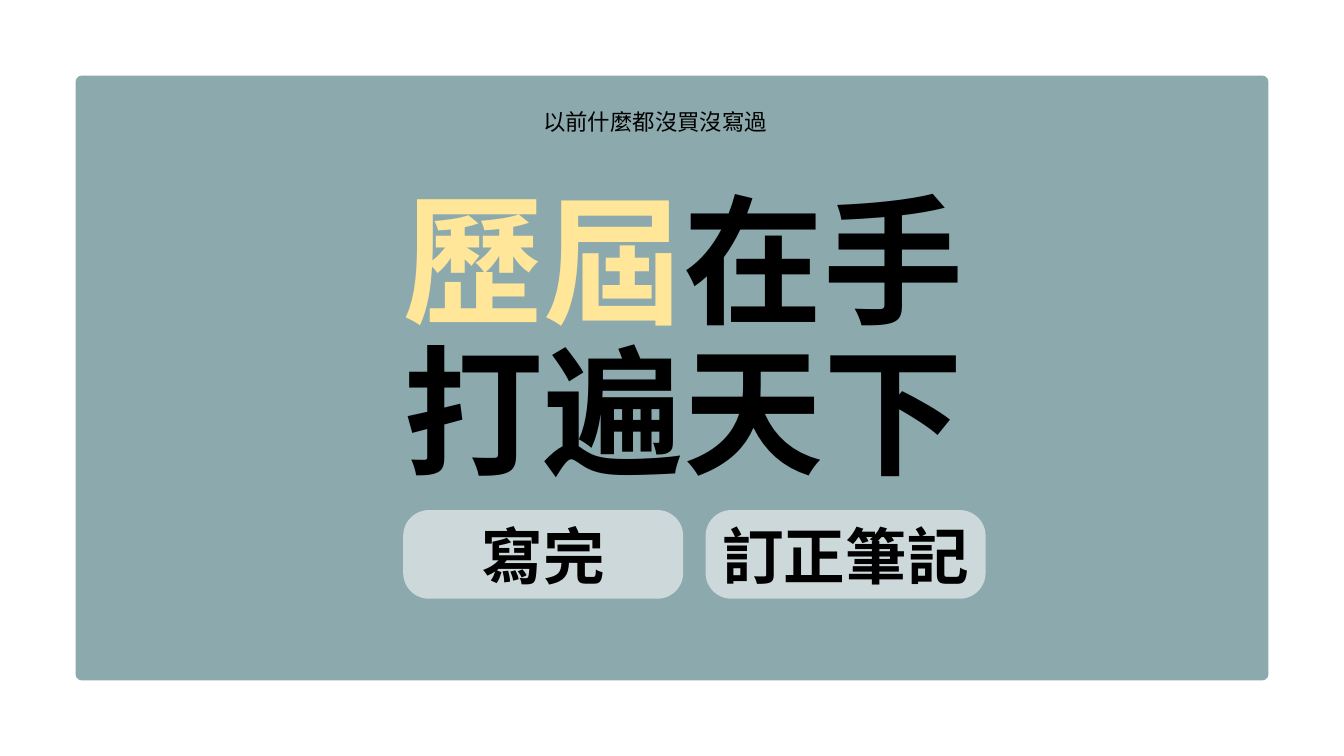
from pptx import Presentation
from pptx.dml.color import RGBColor
from pptx.enum.shapes import MSO_SHAPE
from pptx.enum.text import MSO_ANCHOR, MSO_AUTO_SIZE, PP_ALIGN
from pptx.oxml.ns import qn
from pptx.util import Pt
from lxml import etree

ROUND = MSO_SHAPE.ROUNDED_RECTANGLE
TOP, MIDDLE, BOTTOM = MSO_ANCHOR.TOP, MSO_ANCHOR.MIDDLE, MSO_ANCHOR.BOTTOM
CENTER = PP_ALIGN.CENTER
FIXED = MSO_AUTO_SIZE.NONE

THEME = {
    "font": "Arial",
    "panel": "8CA9AD", "button": "CCD8DA",
    "ink": "000000", "accent": "FFE699",
    "title": 150, "label": 66, "note": 24,
}


def write(shape, text, size, bold=False, anchor=MIDDLE, space=1.0, mark=""):
    """Fill a shape with centred text; the leading mark takes the accent colour."""
    frame = shape.text_frame
    frame.word_wrap = True
    frame.auto_size = FIXED
    frame.vertical_anchor = anchor
    para = frame.paragraphs[0]
    para.alignment = CENTER
    para.line_spacing = space
    para.space_before = Pt(0)
    lines = text.split("\n")
    parts = [(mark, "accent")] if mark else []
    parts += [(line, "ink") for line in lines]
    for i, (words, color) in enumerate(parts):
        if i > len(parts) - len(lines):
            para.add_line_break()
        run = para.add_run()
        run.text = words
        font = run.font
        font.name = THEME["font"]
        font.size = Pt(THEME[size])
        font.bold = bold
        font.color.rgb = RGBColor.from_string(THEME[color])
        east = etree.SubElement(run._r.get_or_add_rPr(), qn("a:ea"))
        east.set("typeface", THEME["font"])
    # Line breaks share the size of the text around them
    for gap in para._p.findall(qn("a:br")):
        etree.SubElement(gap, qn("a:rPr")).set("sz", str(THEME[size] * 100))


def block(left, top, width, height, round_by, color):
    """Add a plain rounded rectangle."""
    shape = slide.shapes.add_shape(ROUND, Pt(left), Pt(top), Pt(width), Pt(height))
    shape.adjustments[0] = round_by
    shape.fill.solid()
    shape.fill.fore_color.rgb = RGBColor.from_string(THEME[color])
    shape.line.fill.background()
    shape.shadow.inherit = False
    return shape


deck = Presentation()
deck.slide_width, deck.slide_height = Pt(1440), Pt(810)
slide = deck.slides.add_slide(deck.slide_layouts[0])

# Panel, behind the placeholders
panel = block(81, 81, 1278, 648, 0.01, "panel")
slide.shapes._spTree.insert(2, panel._element)

# Title and subtitle
title, note = slide.placeholders
for holder, box in ((title, (378, 183, 709, 351)), (note, (162, 116, 1080, 34))):
    holder.left, holder.top, holder.width, holder.height = map(Pt, box)
write(title, "在手\n打遍天下", "title", bold=True, anchor=BOTTOM, space=0.9, mark="歷屆")
write(note, "以前什麼都沒買沒寫過", "note", anchor=TOP, space=0.9)

# Buttons
for i, label in enumerate(("寫完", "訂正筆記")):
    button = block(432 + 324 * i, 546.5, 300, 95, 0.29, "button")
    write(button, label, "label", bold=True)

deck.save("out.pptx")
